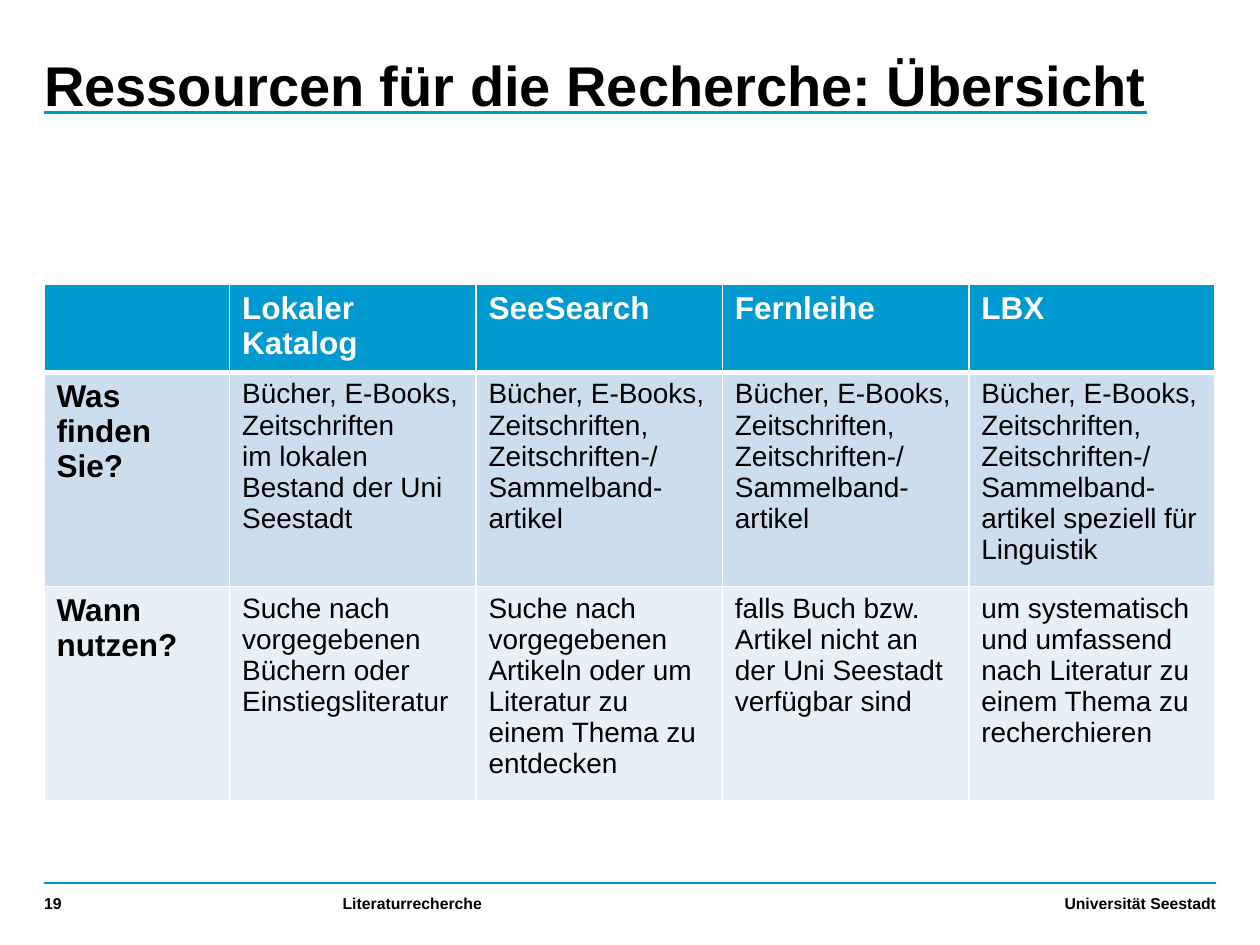
from lxml.etree import SubElement
from pptx import Presentation
from pptx.dml.color import RGBColor
from pptx.enum.shapes import MSO_CONNECTOR
from pptx.enum.text import MSO_ANCHOR, PP_ALIGN
from pptx.oxml import parse_xml
from pptx.oxml.ns import nsdecls, qn
from pptx.util import Pt

COLORS = {
    "rule": "0097CC",
    "header": "009AD1",
    "band_dark": "CCDEEE",
    "band_light": "E7EFF7",
    "text": "000000",
    "white": "FFFFFF",
}
FONT = "Arial"
LEFT, RIGHT = 25.2, 694.8
FOOTER_TOP, FOOTER_HEIGHT = 508.5, 17.3
LABEL_WIDTH, RESOURCE_WIDTH = 106, 140.8
ROW_HEIGHTS = (46.8, 118.8, 113.5)
BAND_FILLS = ("header", "band_dark", "band_light")

MEDIA = "Bücher, E-Books,\nZeitschriften"
ARTICLES = MEDIA + ",\nZeitschriften-/Sammelband-artikel"
OVERVIEW = (
    ("", "Lokaler Katalog", "SeeSearch", "Fernleihe", "LBX"),
    (
        "Was finden Sie?",
        MEDIA + "\nim lokalen Bestand der Uni Seestadt",
        ARTICLES,
        ARTICLES,
        ARTICLES + " speziell für Linguistik",
    ),
    (
        "Wann nutzen?",
        "Suche nach vorgegebenen Büchern oder Einstiegsliteratur",
        "Suche nach vorgegebenen Artikeln oder um Literatur zu einem Thema zu entdecken",
        "falls Buch bzw. Artikel nicht an der Uni Seestadt verfügbar sind",
        "um systematisch und umfassend nach Literatur zu einem Thema zu recherchieren",
    ),
)


def rgb(name):
    """Return the named colour."""
    return RGBColor.from_string(COLORS[name])


def style_text(tf, size, color="text", bold=True):
    """Format every paragraph and run of a text frame."""
    for p in tf.paragraphs:
        for font in [p.font] + [r.font for r in p.runs]:
            font.name, font.size, font.bold = FONT, Pt(size), bold
            font.color.rgb = rgb(color)


def add_text(s, text, left, top, width, height, size, bottom=0):
    """Add a wrapped text box with bold text and return its text frame."""
    tf = s.shapes.add_textbox(Pt(left), Pt(top), Pt(width), Pt(height)).text_frame
    tf.word_wrap = True
    tf.margin_left = tf.margin_top = tf.margin_right = 0
    tf.margin_bottom = Pt(bottom)
    tf.text = text
    style_text(tf, size)
    return tf


def add_title(s, text):
    """Add the title with its coloured underline."""
    tf = add_text(s, text, LEFT, 31.7, 657.4, 96.5, 32)
    p = tf.paragraphs[0]
    p.line_spacing = 0.95
    font = p.runs[0].font
    font.underline = True
    underline = parse_xml(
        f'<a:uFill {nsdecls("a")}><a:solidFill>'
        f'<a:srgbClr val="{COLORS["rule"]}"/></a:solidFill></a:uFill>'
    )
    p.runs[0]._r.rPr.find(qn("a:latin")).addprevious(underline)


def add_footer(s, text, left, width, align=PP_ALIGN.LEFT):
    """Add one footer entry."""
    tf = add_text(s, text, left, FOOTER_TOP, width, FOOTER_HEIGHT, 9, bottom=4.3)
    tf.vertical_anchor = MSO_ANCHOR.BOTTOM
    tf.paragraphs[0].alignment = align


def add_rule(s, y):
    """Add a horizontal rule between the slide margins."""
    rule = s.shapes.add_connector(
        MSO_CONNECTOR.STRAIGHT, Pt(LEFT), Pt(y), Pt(RIGHT), Pt(y)
    )
    rule.line.color.rgb = rgb("rule")
    rule.line.width = Pt(1)
    SubElement(rule._element.spPr, qn("a:effectLst"))


def set_borders(cell, bottom):
    """Give a cell white borders, with its own width at the bottom."""
    widths = {"lnL": 1, "lnR": 1, "lnT": 1, "lnB": bottom}
    for i, (tag, width) in enumerate(widths.items()):
        border = parse_xml(
            f'<a:{tag} {nsdecls("a")} w="{Pt(width)}"><a:solidFill>'
            f'<a:srgbClr val="{COLORS["white"]}"/></a:solidFill></a:{tag}>'
        )
        cell._tc.tcPr.insert(i, border)


def add_overview(s, rows):
    """Add the table of research resources."""
    widths = [LABEL_WIDTH] + [RESOURCE_WIDTH] * (len(rows[0]) - 1)
    table = s.shapes.add_table(
        len(rows), len(widths), Pt(LEFT), Pt(162.4),
        Pt(sum(widths)), Pt(sum(ROW_HEIGHTS)),
    ).table
    for column, width in zip(table.columns, widths):
        column.width = Pt(width)
    for i, texts in enumerate(rows):
        table.rows[i].height = Pt(ROW_HEIGHTS[i])
        for j, text in enumerate(texts):
            cell = table.cell(i, j)
            heading = i == 0 or j == 0
            cell.text_frame.text = text
            style_text(
                cell.text_frame,
                18 if heading else 16,
                "white" if i == 0 else "text",
                heading,
            )
            cell.fill.solid()
            cell.fill.fore_color.rgb = rgb(BAND_FILLS[i])
            set_borders(cell, 3 if i == 0 else 1)


def main():
    """Build and save the slide."""
    prs = Presentation()
    prs.slide_width, prs.slide_height = Pt(720), Pt(540)
    s = prs.slides.add_slide(prs.slide_layouts[6])
    add_rule(s, 504.7)
    add_footer(s, "Universität Seestadt", 450.7, 244.1, PP_ALIGN.RIGHT)
    add_title(s, "Ressourcen für die Recherche: Übersicht")
    add_footer(s, "19", LEFT, 73.4)
    add_overview(s, OVERVIEW)
    add_footer(s, "Literaturrecherche", 195.8, 244.1)
    prs.save("out.pptx")


if __name__ == "__main__":
    main()
